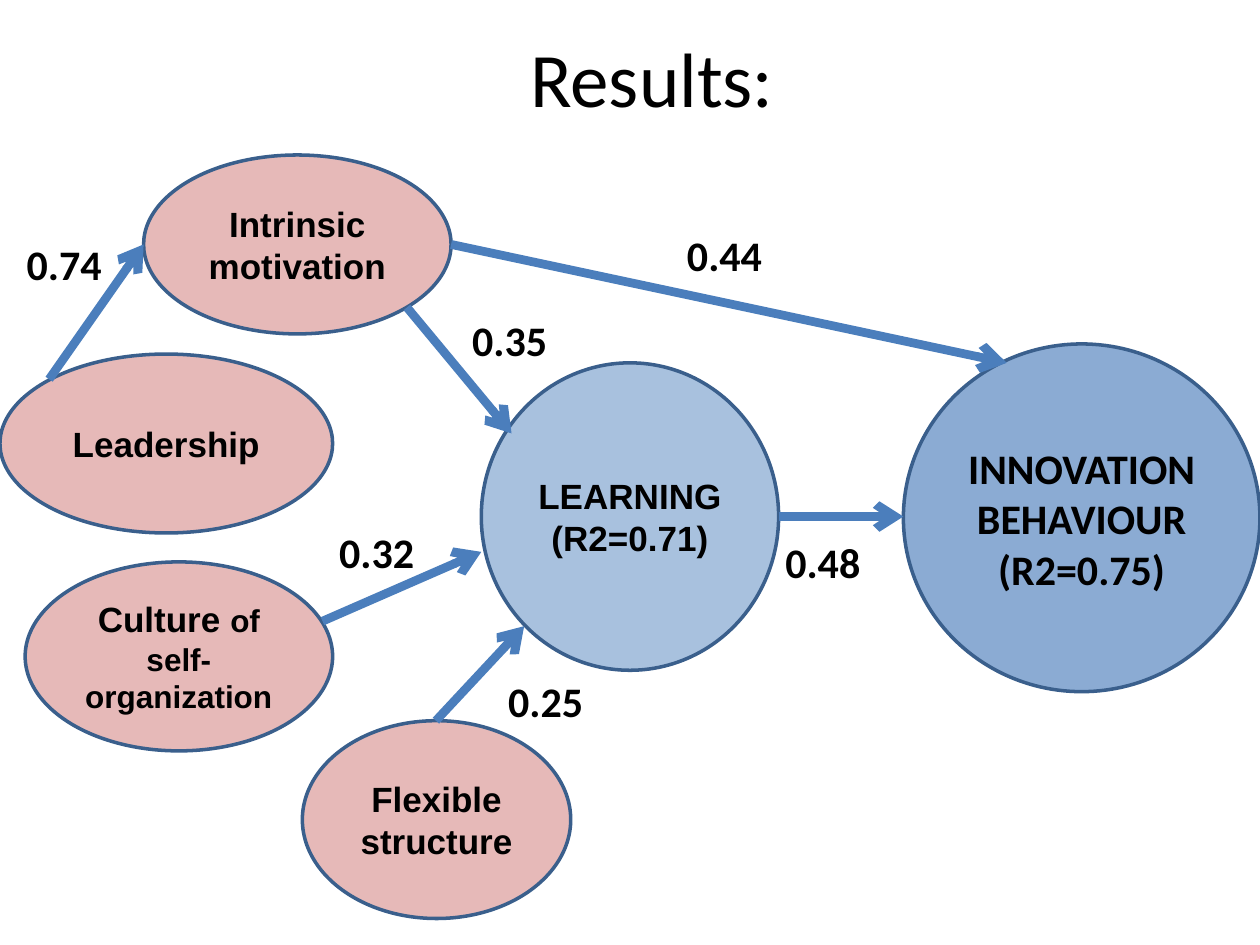
from lxml.etree import SubElement
from pptx import Presentation
from pptx.dml.color import RGBColor
from pptx.enum.shapes import MSO_CONNECTOR as Connector, MSO_SHAPE as Shape
from pptx.enum.text import MSO_ANCHOR as Anchor, PP_ALIGN as Align
from pptx.oxml.ns import qn
from pptx.util import Inches, Pt

PINK, BLUE, OUTLINE, ARROW, BLACK = "E6B9B8", "4F81BD", "3A5F8C", "4B7EBC", "000000"

FACTORS = [
    ((1.14, 1.23, 2.44, 1.42), [[("Intrinsic motivation", 20)]]),
    ((0, 2.81, 2.64, 1.42), [[("Leadership", 20)]]),
    ((0.2, 4.46, 2.44, 1.5), [[("Culture ", 20), ("of self-organization", 18)]]),
    ((2.4, 5.72, 2.13, 1.57), [[("Flexible structure", 20)]]),
]
ARROWS = [
    ((3.23, 2.44), (4.06, 3.44)),
    ((0.39, 3.01), (1.14, 1.94)),
    ((2.56, 4.93), (3.82, 4.38)),
    ((3.46, 5.72), (4.16, 4.97)),
    ((6.18, 4.1), (7.17, 4.1)),
    ((3.58, 1.94), (7.99, 2.88)),
]
COEFFICIENTS = [
    ("0.74", (0, 1.62, 1.02, 0.94)),
    ("0.35", (3.5, 2.18, 1.09, 1.03)),
    ("0.25", (3.82, 5.09, 1.02, 0.94)),
    ("0.44", (5.24, 1.55, 1.02, 0.94)),
    ("0.48", (6.02, 3.99, 1.02, 0.94)),
    ("0.32", (2.48, 3.91, 1.02, 0.94)),
]


def paint(color_format, color):
    color_format.rgb = RGBColor.from_string(color)


def write_text(shape, paragraphs, font="Calibri", bold=True):
    """Fill a shape with paragraphs, each a list of (text, size) runs."""
    frame = shape.text_frame
    frame.word_wrap = True
    frame.vertical_anchor = Anchor.MIDDLE
    for index, runs in enumerate(paragraphs):
        paragraph = frame.add_paragraph() if index else frame.paragraphs[0]
        paragraph.alignment = Align.CENTER
        for text, size in runs:
            run = paragraph.add_run()
            run.text = text
            run.font.name = font
            run.font.size = Pt(size)
            run.font.bold = bold
            paint(run.font.color, BLACK)


def add_title(slide, text, box):
    title = slide.shapes.title
    title.left, title.top, title.width, title.height = map(Inches, box)
    write_text(title, [[(text, 44)]], bold=False)


def add_ellipse(slide, box, paragraphs, fill, opacity=100, font="Arial"):
    ellipse = slide.shapes.add_shape(Shape.OVAL, *map(Inches, box))
    ellipse.shadow.inherit = False
    ellipse.fill.solid()
    paint(ellipse.fill.fore_color, fill)
    if opacity < 100:
        color = ellipse.fill._xPr.find(qn("a:solidFill"))[0]
        SubElement(color, qn("a:alpha"), val=str(opacity * 1000))
    paint(ellipse.line.color, OUTLINE)
    ellipse.line.width = Pt(2)
    write_text(ellipse, paragraphs, font=font)


def add_arrow(slide, start, end):
    arrow = slide.shapes.add_connector(Connector.STRAIGHT, *map(Inches, start + end))
    paint(arrow.line.color, ARROW)
    arrow.line.width = Pt(5)
    SubElement(arrow.line._get_or_add_ln(), qn("a:tailEnd"), type="arrow")
    SubElement(arrow._element.spPr, qn("a:effectLst"))


def add_coefficient(slide, text, box):
    label = slide.shapes.add_shape(Shape.ROUNDED_RECTANGLE, *map(Inches, box))
    label.shadow.inherit = False
    label.fill.background()
    label.line.fill.background()
    write_text(label, [[(text, 24)]])


def main():
    presentation = Presentation()
    presentation.slide_width, presentation.slide_height = Inches(10), Inches(7.5)
    slide = presentation.slides.add_slide(presentation.slide_layouts[5])

    add_title(slide, "Results:", (0.59, 0.13, 9.17, 0.96))
    for box, paragraphs in FACTORS:
        add_ellipse(slide, box, paragraphs, PINK)
    add_ellipse(slide, (3.82, 2.88, 2.36, 2.44),
                [[("LEARNING", 20)], [("(R2=0.71)", 20)]], BLUE, opacity=49)
    add_ellipse(slide, (7.17, 2.73, 2.83, 2.76),
                [[("INNOVATION BEHAVIOUR", 24)], [("(R2=0.75)", 24)]],
                BLUE, opacity=66, font="Calibri")
    for start, end in ARROWS:
        add_arrow(slide, start, end)
    for text, box in COEFFICIENTS:
        add_coefficient(slide, text, box)

    presentation.save("out.pptx")


if __name__ == "__main__":
    main()
